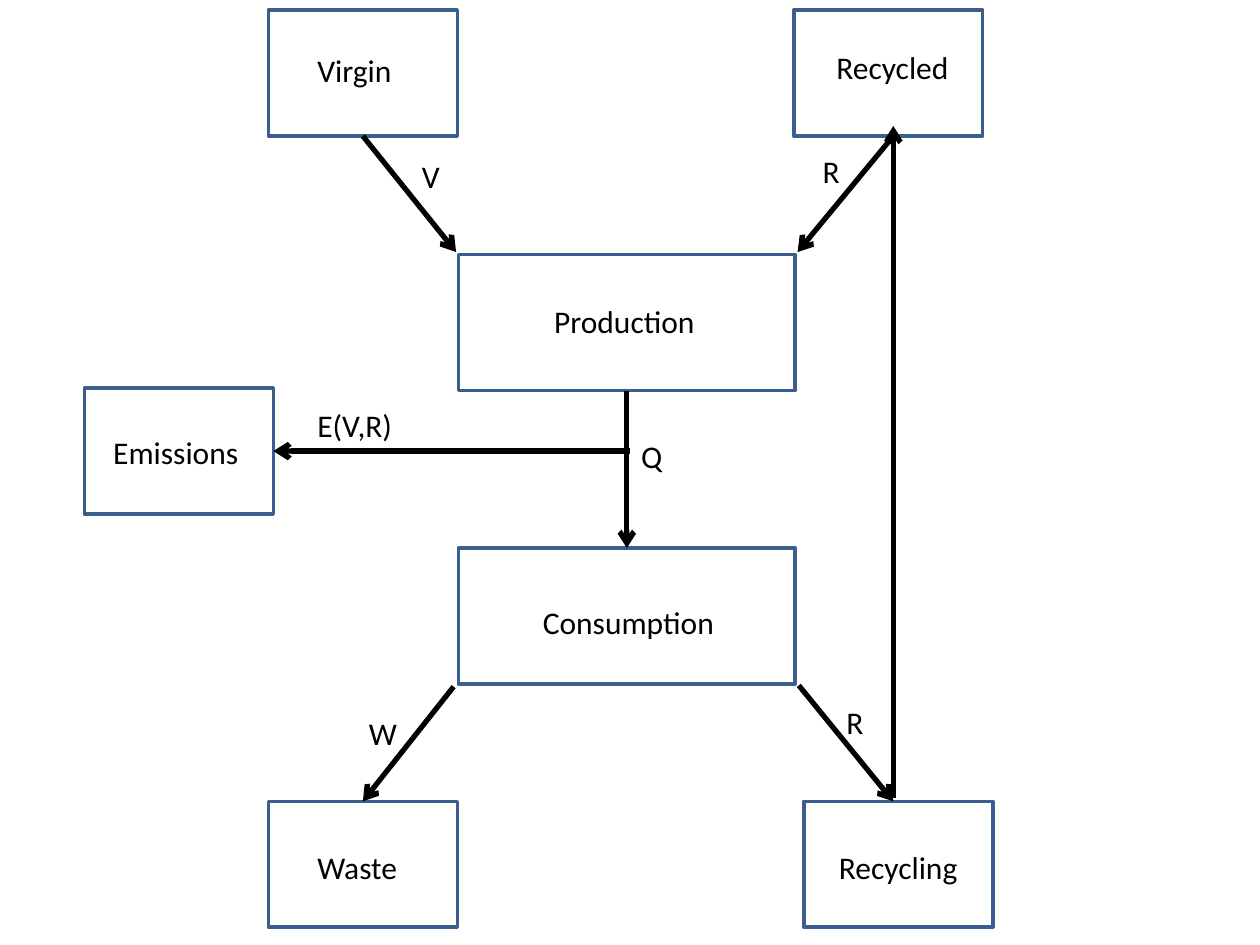
from dataclasses import dataclass
from lxml import etree
from pptx import Presentation
from pptx.dml.color import RGBColor
from pptx.enum.shapes import MSO_CONNECTOR, MSO_SHAPE
from pptx.enum.text import MSO_AUTO_SIZE
from pptx.oxml.ns import qn
from pptx.util import Inches, Pt

RECT, LINE = MSO_SHAPE.RECTANGLE, MSO_CONNECTOR.STRAIGHT
FIT = MSO_AUTO_SIZE.SHAPE_TO_FIT_TEXT
TOP, BOTTOM, RIGHT = 0, 2, 3


@dataclass(frozen=True)
class Theme:
    ink: RGBColor = RGBColor(0, 0, 0)
    edge: RGBColor = RGBColor(0x3A, 0x5F, 0x8C)
    font: str = "Calibri"
    size: int = 18
    rule: int = 2
    arrow: int = 3


THEME = Theme()

# Content: stage name -> (left, top), size, (label left, top, width)
SMALL, LARGE = (1.5, 1), (2.67, 1.08)
HEAD, FOOT, LEFT, MID = 0.08, 6.36, 2.13, 3.64
STAGES = {
    "Production": ((MID, 2.02), LARGE, (4.3, 2.35, 1.33)),
    "Consumption": ((MID, 4.35), LARGE, (4.21, 4.74, 1.58)),
    "Virgin": ((LEFT, HEAD), SMALL, (2.42, 0.36, 0.84)),
    "Recycled": ((6.3, HEAD), SMALL, (6.54, 0.33, 1.1)),
    "Waste": ((LEFT, FOOT), SMALL, (2.42, 6.68, 0.84)),
    "Recycling": ((6.38, FOOT), SMALL, (6.56, 6.68, 1.15)),
    "Emissions": ((0.67, 3.08), SMALL, (0.8, 3.39, 1.2)),
}

# Flows: each end is a point or a (stage, side) joint
LOOP = 7.09
FLOWS = [
    (("Production", BOTTOM), ("Consumption", TOP)),
    ((LOOP, 1.08), (6.33, 2)),
    (("Virgin", BOTTOM), (3.62, 2)),
    ((6.34, 5.44), (LOOP, FOOT)),
    ((3.6, 5.45), ("Waste", TOP)),
    ((LOOP, 6.33), (LOOP, 1)),
    ((5, 3.58), ("Emissions", RIGHT)),
]

MARKS = [
    ("W", (2.83, 5.62, 0.43)),
    ("R", (6.62, 5.53, 0.34)),
    ("R", (6.43, 1.16, 0.34)),
    ("V", (3.25, 1.2, 0.35)),
    ("Q", (4.99, 3.42, 0.37)),
    ("E(V,R)", (2.42, 3.17, 0.8)),
]


def add_box(slide, spot, size):
    box = slide.shapes.add_shape(RECT, *map(Inches, spot + size))
    box.shadow.inherit = False
    box.fill.background()
    box.line.color.rgb = THEME.edge
    box.line.width = Pt(THEME.rule)
    return box


def add_label(slide, text, place):
    frame = slide.shapes.add_textbox(*map(Inches, place + (0.4,))).text_frame
    frame.word_wrap = False
    frame.auto_size = FIT
    frame.text = text
    font = frame.paragraphs[0].runs[0].font
    font.name, font.size = THEME.font, Pt(THEME.size)
    font.color.rgb = THEME.ink


def add_flow(slide, boxes, start, end):
    points = [(0, 0) if p[0] in boxes else p for p in (start, end)]
    flow = slide.shapes.add_connector(LINE, *map(Inches, points[0] + points[1]))
    for (name, side), join in ((start, flow.begin_connect), (end, flow.end_connect)):
        if name in boxes:
            join(boxes[name], side)
    flow.line.color.rgb = THEME.ink
    flow.line.width = Pt(THEME.arrow)
    props = flow._element.spPr
    etree.SubElement(props.find(qn("a:ln")), qn("a:tailEnd"), type="arrow")
    etree.SubElement(props, qn("a:effectLst"))


def main():
    deck = Presentation()
    deck.slide_width, deck.slide_height = Inches(10), Inches(7.5)
    slide = deck.slides.add_slide(deck.slide_layouts[6])

    # Stages, then flows, then text on top
    boxes = {name: add_box(slide, spot, size)
             for name, (spot, size, _) in STAGES.items()}
    for start, end in FLOWS:
        add_flow(slide, boxes, start, end)
    names = [(name, place) for name, (_, _, place) in STAGES.items()]
    for text, place in names + MARKS:
        add_label(slide, text, place)

    deck.save("out.pptx")


if __name__ == "__main__":
    main()
